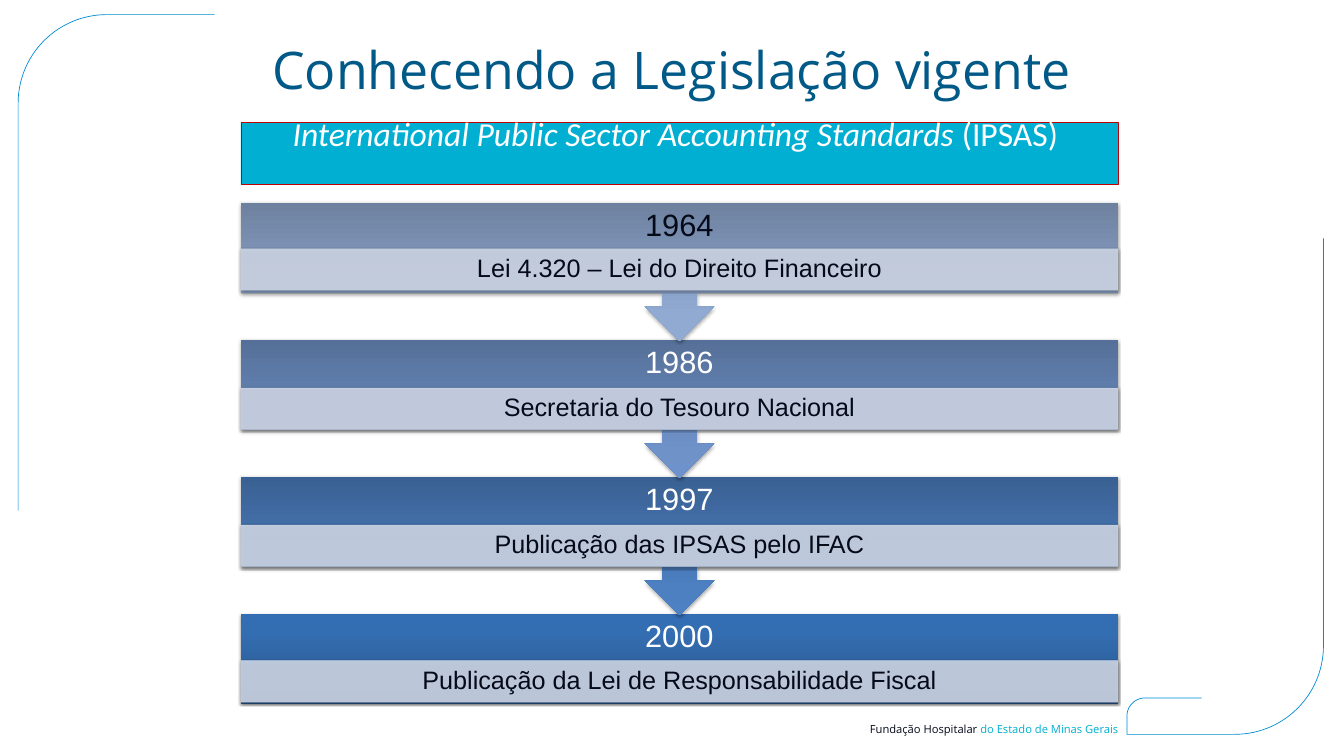
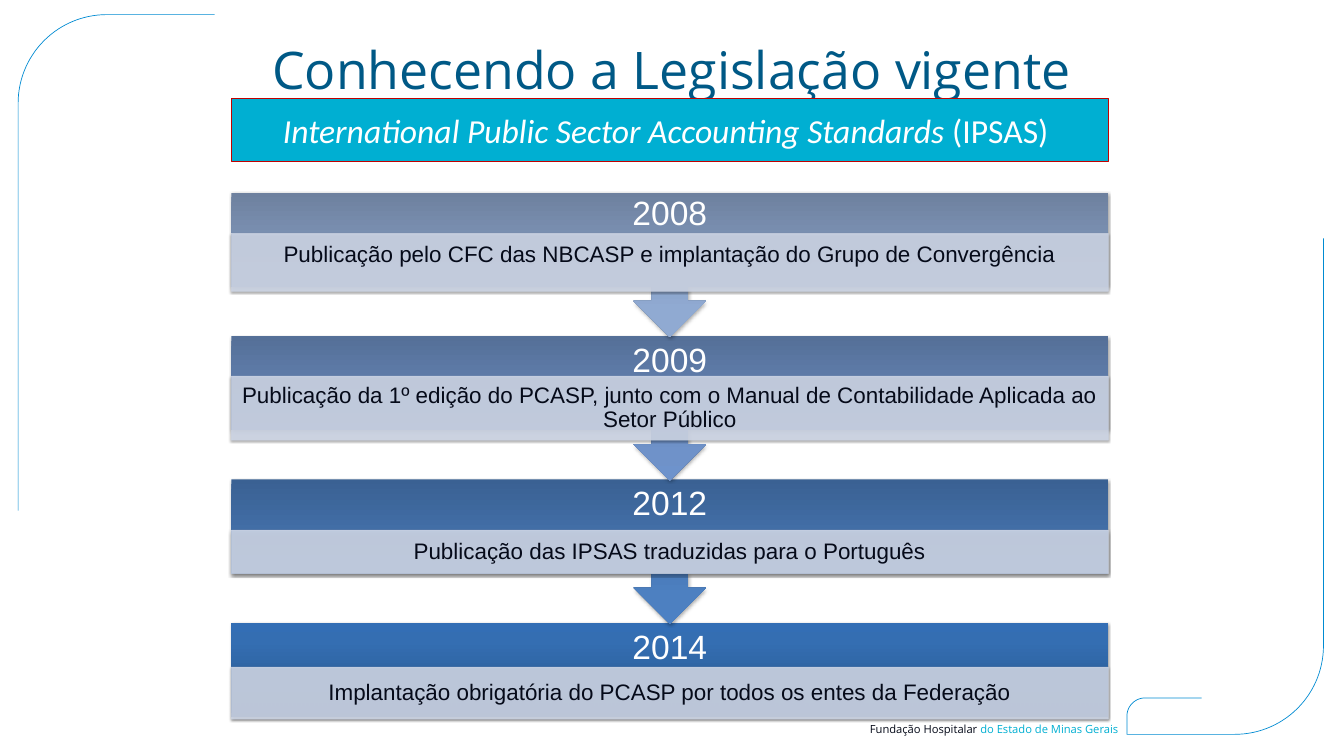
from dataclasses import dataclass
from math import cos, radians, sin
from typing import NamedTuple

from lxml.etree import SubElement
from pptx import Presentation
from pptx.dml.color import RGBColor
from pptx.enum.shapes import MSO_SHAPE as Preset
from pptx.enum.text import MSO_ANCHOR as Anchor, MSO_AUTO_SIZE as AutoSize, PP_ALIGN as Align
from pptx.oxml.ns import qn
from pptx.util import Pt


class Box(NamedTuple):
    """A rectangle in points."""
    left: float
    top: float
    width: float
    height: float

    def lengths(self):
        """Return the four sides as slide lengths."""
        return [Pt(value) for value in self]


@dataclass(frozen=True)
class Theme:
    """Colours, fonts and type sizes of the deck."""
    ink: str = "050A19"
    white: str = "FFFFFF"
    title: str = "005986"
    cyan: str = "00AFD2"
    frame: str = "008BD2"
    banner_line: str = "C00000"
    detail: str = "CFD7E7"
    shadow: str = "000000"
    ramps: tuple = (
        ("6E819F", "90AAD2", "90ABD4"),
        ("557098", "6F92C9", "6E93CC"),
        ("3A6193", "4D80C1", "4C81C4"),
        ("275488", "346EB2", "336EB5"),
    )
    heading_font: str = "Open Sans"
    banner_font: str = "Calibri"
    step_font: str = "Arial"
    title_size: int = 74
    banner_size: int = 48
    footer_size: int = 16


class Step(NamedTuple):
    """One year of the timeline, with offsets from the top of its block."""
    year: str
    event: str
    detail_top: float
    detail_height: float
    year_colour: str = Theme.white
    year_lift: float = 0
    event_lift: float = 0


class Timeline(NamedTuple):
    """Measures and steps of one timeline."""
    box: Box
    pitch: float
    arrow_height: float
    last_height: float
    label_height: float
    year_size: int
    event_size: int
    inset: float
    steps: tuple


THEME = Theme()
TITLE_BOX = Box(131.8, 52.6, 1656, 91.4)
FOOTER_BOX = Box(1193, 1031.8, 404.6, 19.4)
TOP_CORNER = Box(25.9, 20.9, 280.8, 708.5)
BOTTOM_CORNER = Box(1609.9, 340.6, 280.8, 708.5)
BIG_RADIUS, SMALL_RADIUS = 126.7, 26

FIRST_TIMELINE = Timeline(
    Box(344.2, 289.4, 1252.8, 715.7), 195.84, 198, 128.2, 69.1, 44, 36, 20,
    (
        Step("1964", "Lei 4.320 – Lei do Direito Financeiro", 66.2, 59, THEME.ink),
        Step("1986", "Secretaria do Tesouro Nacional", 69.1, 59),
        Step("1997", "Publicação das IPSAS pelo IFAC", 69.1, 59),
        Step("2000", "Publicação da Lei de Responsabilidade Fiscal", 67, 59),
    ),
)
SECOND_TIMELINE = Timeline(
    Box(330.5, 275, 1252.8, 749.5), 204.9, 206.6, 134.6, 72.7, 48, 32, 10,
    (
        Step("2008", "Publicação pelo CFC das NBCASP e implantação do Grupo de Convergência",
             58.3, 82.8, year_lift=4.3, event_lift=10.8),
        Step("2009", "Publicação da 1º edição do PCASP, junto com o Manual de "
             "Contabilidade Aplicada ao Setor Público", 57.6, 91.4),
        Step("2012", "Publicação das IPSAS traduzidas para o Português", 72.7, 61.9),
        Step("2014", "Implantação obrigatória do PCASP por todos os entes da Federação",
             63.4, 74.2),
    ),
)


def colour(code):
    """Turn a hex code into a colour."""
    return RGBColor.from_string(code)


def set_frame(shape, insets=(0, 0, 0, 0), anchor=Anchor.MIDDLE):
    """Prepare a shape's text frame and return its first paragraph."""
    frame = shape.text_frame
    frame.auto_size = AutoSize.NONE
    frame.word_wrap = True
    frame.vertical_anchor = anchor
    (frame.margin_left, frame.margin_top,
     frame.margin_right, frame.margin_bottom) = [Pt(inset) for inset in insets]
    return frame.paragraphs[0]


def add_span(para, text, font, size, code, italic=False):
    """Add one formatted run to a paragraph."""
    span = para.add_run()
    span.text = text
    span.font.name = font
    span.font.size = Pt(size)
    span.font.italic = italic
    span.font.color.rgb = colour(code)


def add_shadow(shape):
    """Give a shape the soft shadow of the timeline."""
    shape.shadow.inherit = False
    effects = shape._element.spPr.find(qn("a:effectLst"))
    outer = SubElement(effects, qn("a:outerShdw"), blurRad=str(Pt(3.1)),
                       dist=str(Pt(1.8)), dir="5400000", rotWithShape="0")
    shade = SubElement(outer, qn("a:srgbClr"), val=THEME.shadow)
    SubElement(shade, qn("a:alpha"), val="35000")


def fill_ramp(shape, ramp):
    """Fill a shape with a three-stop vertical gradient."""
    shape.fill.gradient()
    shape.fill.gradient_angle = 90
    stops = shape._element.spPr.find(".//" + qn("a:gsLst"))
    stops.clear()
    for position, code in zip((0, 80, 100), ramp):
        stop = SubElement(stops, qn("a:gs"), pos=str(position * 1000))
        SubElement(stop, qn("a:srgbClr"), val=code)


def arc(centre_x, centre_y, radius, start):
    """List the points of a clockwise quarter circle."""
    angles = [radians(start + 3 * step) for step in range(31)]
    return [(centre_x + radius * cos(angle), centre_y + radius * sin(angle))
            for angle in angles]


def add_outline(page, points):
    """Draw an open thin line through points."""
    (first_x, first_y), *rest = [(Pt(x), Pt(y)) for x, y in points]
    builder = page.shapes.build_freeform(first_x, first_y, scale=1.0)
    builder.add_line_segments(rest, close=False)
    outline = builder.convert_to_shape()
    outline.fill.background()
    outline.line.color.rgb = colour(THEME.frame)
    outline.line.width = Pt(1)
    outline.shadow.inherit = False
    return outline


def add_top_corner(page, box):
    """Draw the rounded line of the top left corner."""
    return add_outline(page, [
        (box.left, box.top + box.height),
        *arc(box.left + BIG_RADIUS, box.top + BIG_RADIUS, BIG_RADIUS, 180),
        (box.left + box.width, box.top),
    ])


def add_bottom_corner(page, box):
    """Draw the rounded line and hook of the bottom right corner."""
    right, bottom = box.left + box.width, box.top + box.height
    return add_outline(page, [
        (right, box.top),
        *arc(right - BIG_RADIUS, bottom - BIG_RADIUS, BIG_RADIUS, 0),
        (box.left, bottom),
        *arc(box.left + SMALL_RADIUS, bottom - SMALL_RADIUS, SMALL_RADIUS, 180),
        (box.left + 106.6, bottom - 2 * SMALL_RADIUS),
    ])


def add_footer(page, box):
    """Write the institution line."""
    footer = page.shapes.add_textbox(*box.lengths())
    para = set_frame(footer, anchor=Anchor.TOP)
    para.alignment = Align.RIGHT
    for text, code in (("Fundação Hospitalar ", THEME.ink),
                       ("do Estado de Minas Gerais", THEME.cyan)):
        add_span(para, text, THEME.heading_font, THEME.footer_size, code)
    return footer


def move_to_layout(layout, shapes):
    """Make shapes part of the layout that all pages share."""
    for shape in shapes:
        layout.shapes._spTree.append(shape._element)


def add_title(page, box):
    """Place and write the title."""
    title = page.shapes.title
    title.left, title.top, title.width, title.height = box.lengths()
    para = set_frame(title)
    para.alignment = Align.CENTER
    add_span(para, "Conhecendo a Legislação vigente", THEME.heading_font,
             THEME.title_size, THEME.title)


def add_banner(page, box, bottom_inset):
    """Draw the standards banner."""
    banner = page.shapes.add_shape(Preset.RECTANGLE, *box.lengths())
    banner.shadow.inherit = False
    banner.fill.solid()
    banner.fill.fore_color.rgb = colour(THEME.cyan)
    banner.line.color.rgb = colour(THEME.banner_line)
    banner.line.width = Pt(0.75)
    para = set_frame(banner, (14.4, 7.2, 26, bottom_inset))
    para.alignment = Align.CENTER
    for text, italic in (("International Public Sector Accounting Standards ", True),
                         ("(IPSAS)", False)):
        add_span(para, text, THEME.banner_font, THEME.banner_size, THEME.white, italic)


def add_block(page, box, ramp, is_last):
    """Draw the gradient block of a step, with an arrow unless it is the last."""
    preset = Preset.RECTANGLE if is_last else Preset.UP_ARROW_CALLOUT
    block = page.shapes.add_shape(preset, *box.lengths())
    if not is_last:
        block.rotation = 180
        for index, value in enumerate((0.25, 0.25, 0.25, 0.65)):
            block.adjustments[index] = value
    fill_ramp(block, ramp)
    block.line.fill.background()
    add_shadow(block)


def add_detail(page, box):
    """Draw the pale translucent band of a step."""
    detail = page.shapes.add_shape(Preset.RECTANGLE, *box.lengths())
    detail.fill.solid()
    detail.fill.fore_color.rgb = colour(THEME.detail)
    detail.line.color.rgb = colour(THEME.detail)
    detail.line.width = Pt(0.75)
    for tint in detail._element.spPr.iter(qn("a:srgbClr")):
        SubElement(tint, qn("a:alpha"), val="89000")
    add_shadow(detail)
    return detail


def add_step_text(shape, text, insets, size, code):
    """Write one centred line of a step."""
    para = set_frame(shape, insets)
    para.alignment = Align.CENTER
    para.line_spacing = 0.9
    add_span(para, text, THEME.step_font, size, code)


def add_timeline(page, timeline):
    """Draw the steps from the last up, so that each arrow overlaps the next block."""
    left, top, width, _ = timeline.box
    last = len(timeline.steps) - 1
    inset = timeline.inset
    for index, step in reversed(list(enumerate(timeline.steps))):
        step_top = top + index * timeline.pitch
        height = timeline.last_height if index == last else timeline.arrow_height
        add_block(page, Box(left, step_top, width, height), THEME.ramps[index], index == last)
        label_box = Box(left, step_top - step.year_lift, width, timeline.label_height)
        label = page.shapes.add_textbox(*label_box.lengths())
        add_step_text(label, step.year, (inset, 0, inset, 0),
                      timeline.year_size, step.year_colour)
        detail = add_detail(page, Box(left, step_top + step.detail_top, width,
                                      step.detail_height))
        add_step_text(detail, step.event, (inset, 2, inset, 2 + 2 * step.event_lift),
                      timeline.event_size, THEME.ink)


def add_page(deck, banner_box, banner_inset, timeline):
    """Add a page with title, banner and timeline."""
    page = deck.slides.add_slide(deck.slide_layouts[5])
    add_title(page, TITLE_BOX)
    add_banner(page, banner_box, banner_inset)
    add_timeline(page, timeline)
    return page


def main():
    """Build and save the deck."""
    deck = Presentation()
    deck.slide_width, deck.slide_height = Pt(1920), Pt(1080)
    page = add_page(deck, Box(344.2, 175, 1252.8, 88.6), 64.4, FIRST_TIMELINE)
    move_to_layout(page.slide_layout, [
        add_bottom_corner(page, BOTTOM_CORNER),
        add_footer(page, FOOTER_BOX),
        add_top_corner(page, TOP_CORNER),
    ])
    add_page(deck, Box(330.5, 141.1, 1252.8, 88.6), 7.2, SECOND_TIMELINE)
    deck.save("out.pptx")


if __name__ == "__main__":
    main()
